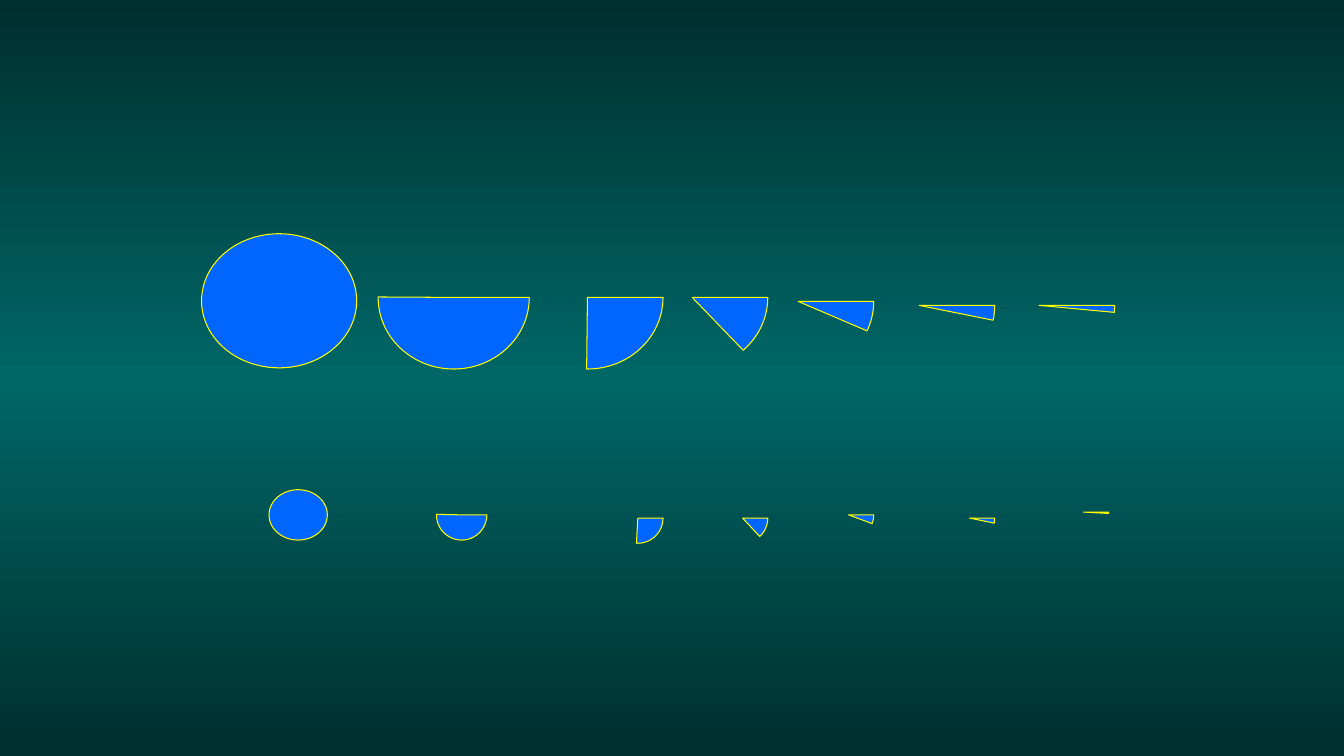
from copy import deepcopy

from pptx import Presentation
from pptx.dml.color import RGBColor
from pptx.enum.shapes import MSO_SHAPE
from pptx.util import Cm, Pt

COLOURS = {"edge": "002F2F", "middle": "006666", "sector": "0066FF", "outline": "FFFF00"}

# Each row: circle (left, top, width, height), sector size, sectors (left, top, degrees)
ROWS = [
    ((5.08, 5.89, 3.91, 3.38), (3.81, 3.61), [
        (9.53, 5.69, 180.33), (12.9, 5.69, 90.63), (15.54, 5.69, 46.01),
        (18.21, 5.79, 23.17), (21.26, 5.89, 11.38), (24.28, 5.89, 5.34)]),
    ((6.78, 12.34, 1.47, 1.27), (1.27, 1.27), [
        (11, 12.34, 181.25), (15.44, 12.42, 93.12), (18.08, 12.42, 47.06),
        (20.75, 12.34, 20.13), (23.8, 12.42, 11.63), (26.67, 12.27, 3.07)]),
]


class SectorPage:
    def __init__(self, page):
        self.page = page

    def colour(self, name):
        return RGBColor.from_string(COLOURS[name])

    def background(self, names):
        """Spread the named colours evenly from top to bottom."""
        fill = self.page.background.fill
        fill.gradient()
        fill.gradient_angle = 270
        first_stop = self.page.element.xpath(".//p:bg//a:gs")[0]
        for _ in names[2:]:
            first_stop.addnext(deepcopy(first_stop))
        for index, (stop, name) in enumerate(zip(fill.gradient_stops, names)):
            stop.position = index / (len(names) - 1)
            stop.color.rgb = self.colour(name)

    def shape(self, kind, *bounds):
        shape = self.page.shapes.add_shape(kind, *map(Cm, bounds))
        shape.shadow.inherit = False
        for fill, name in ((shape.fill, "sector"), (shape.line.fill, "outline")):
            fill.solid()
            fill.fore_color.rgb = self.colour(name)
        shape.line.width = Pt(0.75)
        return shape

    def circle(self, *bounds):
        self.shape(MSO_SHAPE.OVAL, *bounds)

    def sector(self, left, top, size, degrees):
        """Draw a pie that opens clockwise from the right."""
        pie = self.shape(MSO_SHAPE.PIE, left, top, *size)
        pie.adjustments[0] = 0
        pie.adjustments[1] = degrees * 0.6  # 60000 units a degree, scaled by 100000


def main():
    deck = Presentation()
    deck.slide_width, deck.slide_height = Cm(33.87), Cm(19.05)
    page = SectorPage(deck.slides.add_slide(deck.slide_layouts[6]))
    page.background(["edge", "middle", "edge"])
    for circle, size, sectors in ROWS:
        page.circle(*circle)
        for left, top, degrees in sectors:
            page.sector(left, top, size, degrees)
    deck.save("out.pptx")


if __name__ == "__main__":
    main()
